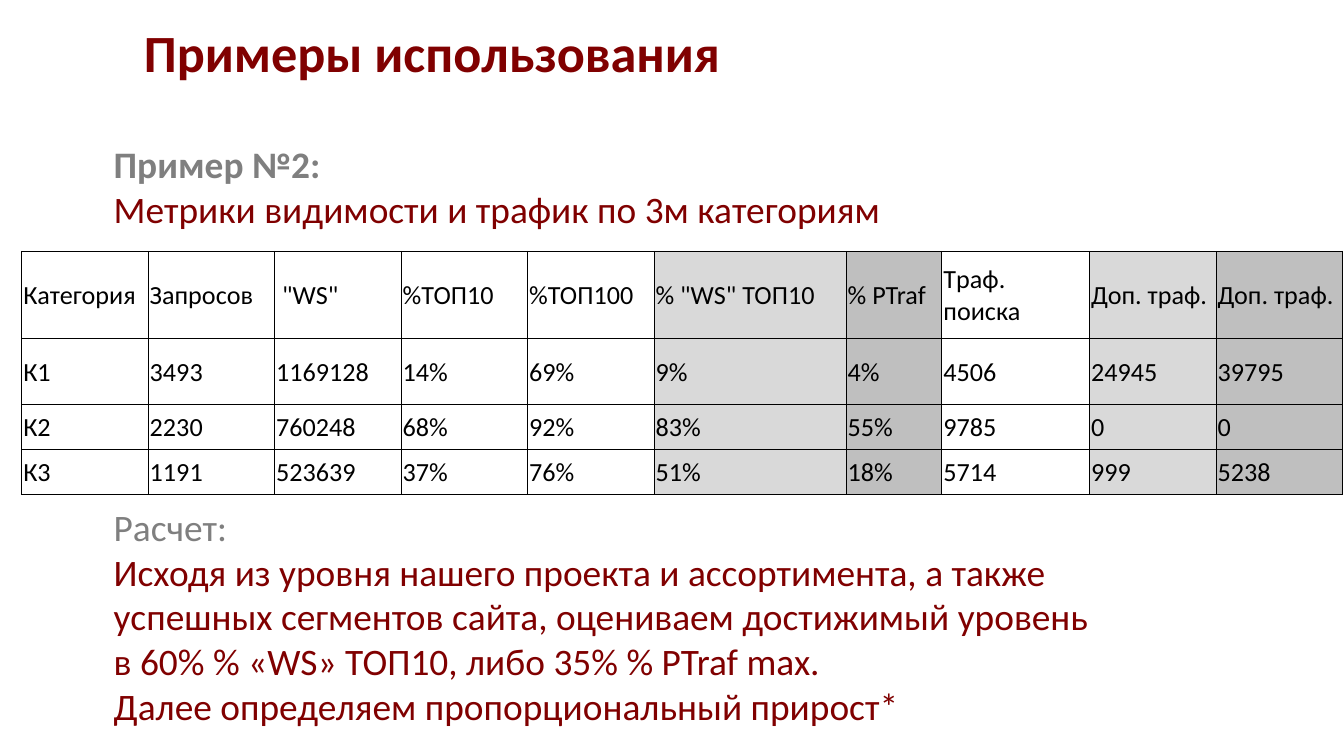
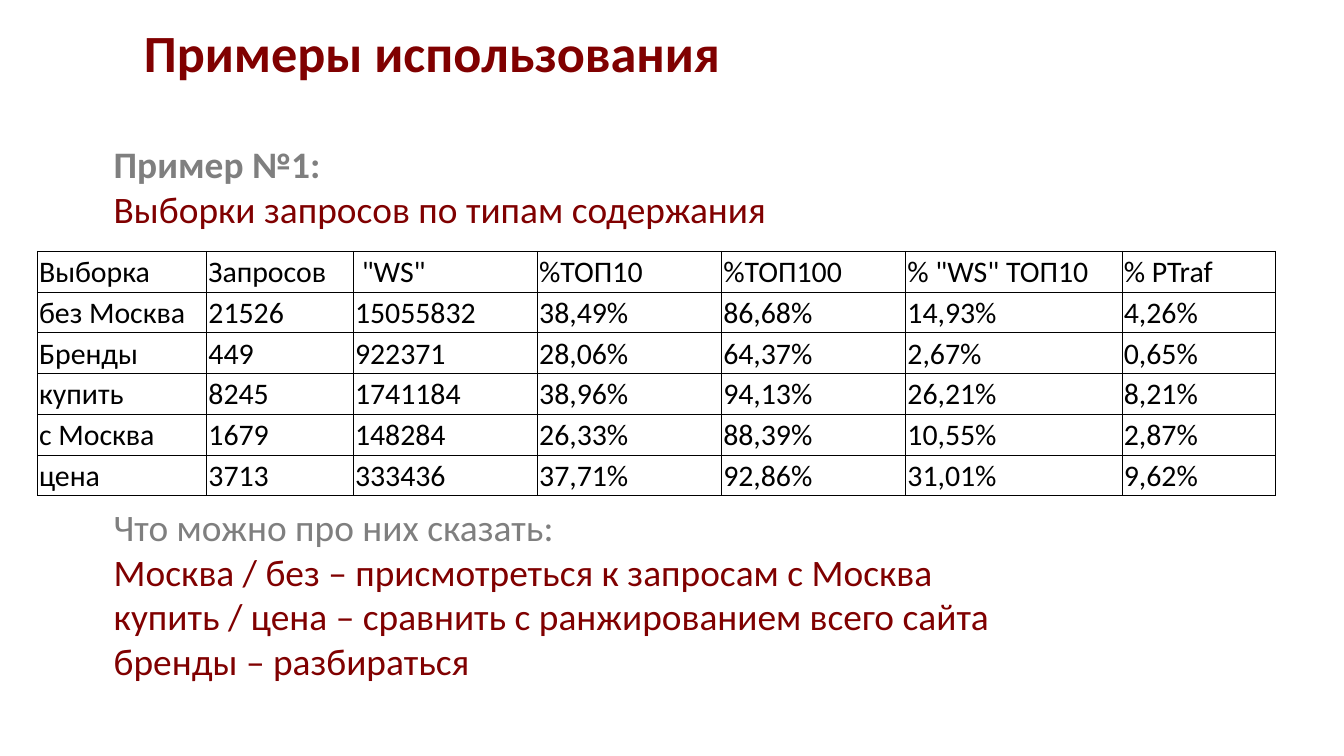
from dataclasses import dataclass

from lxml.etree import SubElement
from pptx import Presentation
from pptx.dml.color import RGBColor as Rgb
from pptx.enum.text import MSO_ANCHOR as Anchor, MSO_AUTO_SIZE as AutoSize, PP_ALIGN as Align
from pptx.oxml.ns import qn
from pptx.util import Cm, Pt

TITLE_ONLY = 5


@dataclass(frozen=True)
class Theme:
    font: str = "Calibri"
    accent: str = "800000"
    muted: str = "7F7F7F"
    ink: str = "000000"
    light: str = "D9D9D9"
    dark: str = "BFBFBF"
    title_size: int = 28
    body_size: int = 20
    title_leading: int = 18
    table_gap: float = 146.5
    border: float = 0.5


THEME = Theme()
TITLE_BOX = (0, 0.89, 17.1, 0.74)
BODY_BOX = (1.9, 2.54, 19.4, 11.38)
TABLE_TOP = 4.75
CELL_INSET = Cm(0.03)


def format_runs(para, size, colour, bold=False):
    for span in para.runs:
        font = span.font
        font.name, font.size, font.bold = THEME.font, Pt(size), bold
        font.color.rgb = Rgb.from_string(colour)


def set_title(page, box, text):
    title = page.shapes.title
    title.left, title.top, title.width, title.height = map(Cm, box)
    frame = title.text_frame
    frame.text = text
    frame.auto_size = AutoSize.SHAPE_TO_FIT_TEXT
    frame.vertical_anchor = Anchor.MIDDLE
    frame.margin_left = Cm(2.72)
    frame.margin_top = frame.margin_right = frame.margin_bottom = 0
    para = frame.paragraphs[0]
    para.alignment = Align.LEFT
    para.line_spacing = Pt(THEME.title_leading)
    format_runs(para, THEME.title_size, THEME.accent, bold=True)


def add_commentary(page, box, example, subject, heading, remarks):
    """Write the text above and below the table, leaving room for it."""
    frame = page.shapes.add_textbox(*map(Cm, box)).text_frame
    frame.word_wrap = True
    frame.auto_size = AutoSize.SHAPE_TO_FIT_TEXT
    frame.text = "\n".join([example, subject, heading, *remarks])
    for para in frame.paragraphs:
        format_runs(para, THEME.body_size, THEME.accent)
    first, _, calculation = frame.paragraphs[:3]
    format_runs(first, THEME.body_size, THEME.muted, bold=True)
    format_runs(calculation, THEME.body_size, THEME.muted)
    calculation.space_before = Pt(THEME.table_gap)


def draw_borders(cell):
    properties = cell._tc.get_or_add_tcPr()
    for side in ("a:lnL", "a:lnR", "a:lnT", "a:lnB"):
        line = SubElement(properties, qn(side), w=str(Pt(THEME.border)))
        fill = SubElement(line, qn("a:solidFill"))
        SubElement(fill, qn("a:srgbClr"), val=THEME.ink)


def format_cell(cell, text, size, shade):
    cell.text = text
    cell.vertical_anchor = Anchor.MIDDLE
    cell.margin_left = cell.margin_right = cell.margin_top = CELL_INSET
    cell.margin_bottom = 0
    format_runs(cell.text_frame.paragraphs[0], size, THEME.ink)
    draw_borders(cell)
    if shade:
        cell.fill.solid()
        cell.fill.fore_color.rgb = Rgb.from_string(shade)
    else:
        cell.fill.background()


def add_metrics(page, left, top, widths, heights, rows, size, shades):
    """Draw the table; shades maps a column number to its fill."""
    frame = page.shapes.add_table(len(rows), len(widths), Cm(left), Cm(top),
                                  Cm(sum(widths)), Cm(sum(heights)))
    table = frame.table
    table.first_row = table.horz_banding = False
    for column, width in zip(table.columns, widths):
        column.width = Cm(width)
    for row, height, texts in zip(table.rows, heights, rows):
        row.height = Cm(height)
        for number, (cell, text) in enumerate(zip(row.cells, texts)):
            format_cell(cell, text, size, shades.get(number))


def add_example(deck, commentary, metrics):
    page = deck.slides.add_slide(deck.slide_layouts[TITLE_ONLY])
    set_title(page, TITLE_BOX, "Примеры использования")
    add_commentary(page, BODY_BOX, **commentary)
    add_metrics(page, top=TABLE_TOP, **metrics)


METRIC_NAMES = ["Запросов", ' "WS"', "%ТОП10", "%ТОП100", '% "WS" ТОП10', "% PTraf"]

CATEGORIES = dict(
    commentary=dict(
        example="Пример №2:",
        subject="Метрики видимости и трафик по 3м категориям",
        heading="Расчет:",
        remarks=[
            "Исходя из уровня нашего проекта и ассортимента, а также успешных сегментов "
            "сайта, оцениваем достижимый уровень в 60% % «WS» ТОП10, либо 35% % PTraf max.",
            "Далее определяем пропорциональный прирост*",
        ],
    ),
    metrics=dict(
        left=0.41,
        widths=[2.39] * 5 + [3.63, 1.81, 2.79] + [2.39] * 2,
        heights=[1.65, 1.25, 0.85, 0.85],
        size=14,
        shades={5: THEME.light, 6: THEME.dark, 8: THEME.light, 9: THEME.dark},
        rows=[
            ["Категория", *METRIC_NAMES, "Tраф. поиска", "Доп. траф.", "Доп. траф."],
            ["К1", "3493", "1169128", "14%", "69%", "9%", "4%", "4506", "24945", "39795"],
            ["К2", "2230", "760248", "68%", "92%", "83%", "55%", "9785", "0", "0"],
            ["К3", "1191", "523639", "37%", "76%", "51%", "18%", "5714", "999", "5238"],
        ],
    ),
)

SELECTIONS = dict(
    commentary=dict(
        example="Пример №1:",
        subject="Выборки запросов по типам содержания",
        heading="Что можно про них сказать:",
        remarks=[
            "Москва / без – присмотреться к запросам с Москва",
            "купить / цена – сравнить с ранжированием всего сайта",
            "бренды – разбираться",
        ],
    ),
    metrics=dict(
        left=0.71,
        widths=[3.2, 2.77] + [3.48] * 3 + [4.09, 2.9],
        heights=[0.77] * 6,
        size=16,
        shades={},
        rows=[
            ["Выборка", *METRIC_NAMES],
            ["без Москва", "21526", "15055832", "38,49%", "86,68%", "14,93%", "4,26%"],
            ["Бренды", "449", "922371", "28,06%", "64,37%", "2,67%", "0,65%"],
            ["купить", "8245", "1741184", "38,96%", "94,13%", "26,21%", "8,21%"],
            ["с Москва", "1679", "148284", "26,33%", "88,39%", "10,55%", "2,87%"],
            ["цена", "3713", "333436", "37,71%", "92,86%", "31,01%", "9,62%"],
        ],
    ),
)


def main():
    deck = Presentation()
    deck.slide_width, deck.slide_height = Cm(25.4), Cm(14.29)
    for example in (CATEGORIES, SELECTIONS):
        add_example(deck, **example)
    deck.save("out.pptx")


if __name__ == "__main__":
    main()
